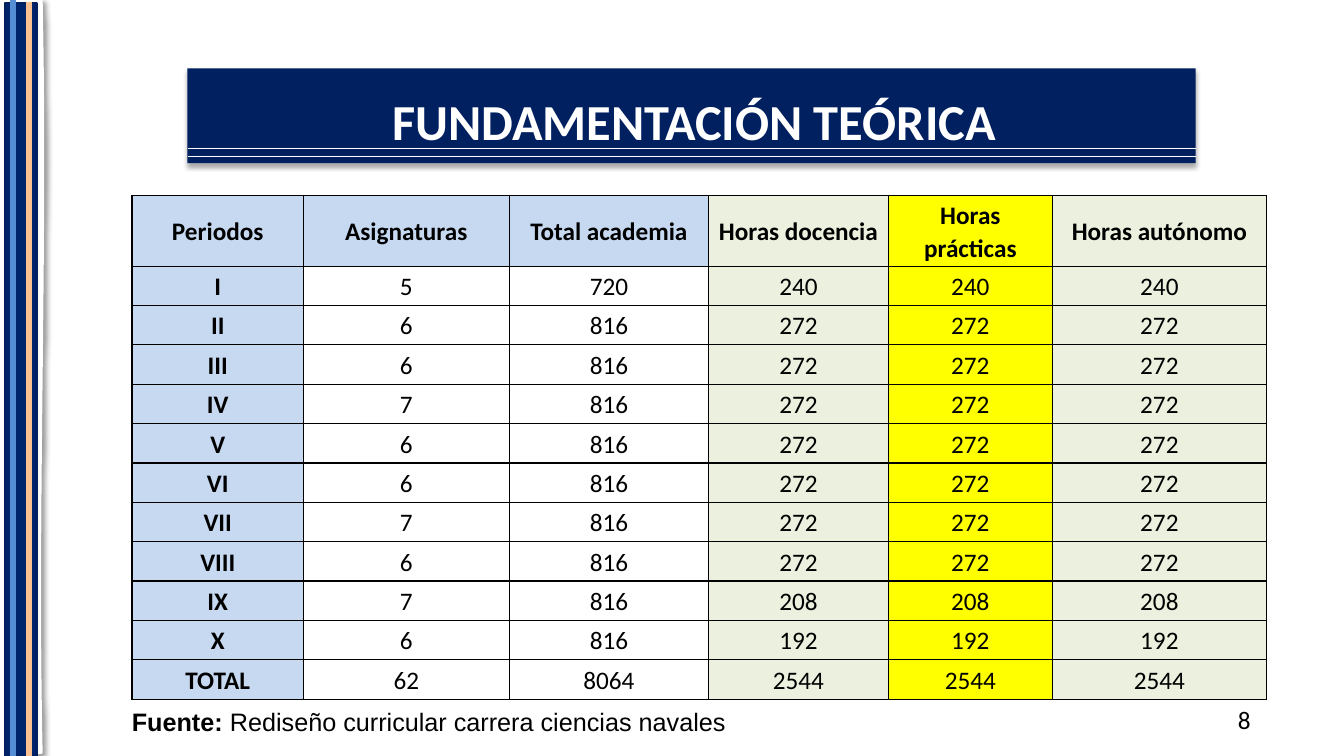
from dataclasses import dataclass

from lxml.etree import SubElement
from pptx import Presentation
from pptx.dml.color import RGBColor
from pptx.enum.shapes import MSO_CONNECTOR, MSO_SHAPE
from pptx.enum.text import MSO_ANCHOR, MSO_AUTO_SIZE, PP_ALIGN
from pptx.oxml.ns import qn
from pptx.util import Inches, Pt


@dataclass(frozen=True)
class Theme:
    navy: str = "002060"
    band: str = "00246C"
    blue: str = "558ED5"
    peach: str = "FAC090"
    pale: str = "C6D9F1"
    green: str = "EBF1DE"
    yellow: str = "FFFF00"
    white: str = "FFFFFF"
    black: str = "000000"
    head: int = 36
    body: int = 18
    font: str = "Calibri"
    note: str = "Arial"


T = Theme()

HEADS = ["Periodos", "Asignaturas", "Total academia",
         "Horas docencia", "Horas prácticas", "Horas autónomo"]
# Period, subjects, total hours, hours of each of the three kinds
HOURS = [
    ("I", 5, 720, 240), ("II", 6, 816, 272), ("III", 6, 816, 272),
    ("IV", 7, 816, 272), ("V", 6, 816, 272), ("VI", 6, 816, 272),
    ("VII", 7, 816, 272), ("VIII", 6, 816, 272), ("IX", 7, 816, 208),
    ("X", 6, 816, 192), ("TOTAL", 62, 8064, 2544),
]
WIDTHS = [1.7, 2.04, 1.98, 1.78, 1.63, 2.12]


def color(code):
    return RGBColor.from_string(code)


def style(run, size=T.body, font=T.font, ink=T.black, bold=False):
    run.font.size = Pt(size)
    run.font.name = font
    run.font.color.rgb = color(ink)
    run.font.bold = bold


def shade(shape, alpha, blur, dist, angle):
    """Give the shape an outer shadow."""
    shape.shadow.inherit = False
    effect = shape._element.spPr.find(qn("a:effectLst"))
    outer = SubElement(effect, qn("a:outerShdw"), blurRad=str(Pt(blur)),
                       dist=str(Pt(dist)), dir=str(angle * 60000),
                       rotWithShape="0")
    tint = SubElement(outer, qn("a:srgbClr"), val=T.black)
    SubElement(tint, qn("a:alpha"), val=str(alpha * 1000))


def block(slide, kind, box, fill, line=None):
    shape = slide.shapes.add_shape(kind, *map(Inches, box))
    shape.shadow.inherit = False
    shape.fill.solid()
    shape.fill.fore_color.rgb = color(fill)
    if line:
        shape.line.color.rgb = color(line)
        shape.line.width = Pt(2)
    else:
        shape.line.fill.background()
    return shape


def rule(slide, start, end, ink, width):
    line = slide.shapes.add_connector(
        MSO_CONNECTOR.STRAIGHT, *map(Inches, start + end))
    line.line.color.rgb = color(ink)
    line.line.width = Pt(width)
    SubElement(line._element.spPr, qn("a:effectLst"))


def label(slide, box, text, align, grow=True):
    """Place a text box and return its paragraph."""
    frame = slide.shapes.add_textbox(*map(Inches, box)).text_frame
    frame.word_wrap = True
    if grow:
        frame.auto_size = MSO_AUTO_SIZE.SHAPE_TO_FIT_TEXT
    para = frame.paragraphs[0]
    para.text = text
    para.alignment = align
    return para


def edge(cell):
    """Draw thin black borders; call before the fill is set."""
    props = cell._tc.get_or_add_tcPr()
    for side in ("lnL", "lnR", "lnT", "lnB"):
        line = SubElement(props, qn(f"a:{side}"), w=str(Pt(1)))
        fill = SubElement(line, qn("a:solidFill"))
        SubElement(fill, qn("a:srgbClr"), val=T.black)


def ribbon(slide, x, y, w, h):
    # The wave lies on its side along the right of the band
    length, thick = 7.47, 0.13
    wave = block(slide, MSO_SHAPE.WAVE,
                 (x + w - length / 2, y + h / 2 - 0.1, length, thick),
                 T.white, T.white)
    wave.rotation = 90
    shade(wave, 40, 4, 3, 45)
    block(slide, MSO_SHAPE.RECTANGLE, (x, y, w, h), T.band, T.navy)
    for dx, top, ink in ((0.08, 0, T.blue), (0.24, 0.02, T.peach)):
        rule(slide, (x + dx, top), (x + dx, top + 7.5), ink, 4.5)


def banner(slide, x, y, w, h):
    bar = block(slide, MSO_SHAPE.RECTANGLE, (x, y, w, h), T.navy)
    shade(bar, 32, 3.5, 2.2, 90)
    title = label(slide, (x + 1.76, y + 0.16, 6.53, 0.71),
                  "FUNDAMENTACIÓN TEÓRICA", PP_ALIGN.CENTER)
    style(title.runs[0], T.head, ink=T.white, bold=True)
    for dy in (0.87, 0.79):
        rule(slide, (x, y + dy), (x + w, y + dy), T.white, 0.75)


def grid(slide, x, y, w, h):
    rows = [HEADS] + [(name, count, total, part, part, part)
                      for name, count, total, part in HOURS]
    table = slide.shapes.add_table(
        len(rows), len(HEADS), *map(Inches, (x, y, w, h))).table
    table.first_row = table.horz_banding = False
    for col, width in zip(table.columns, WIDTHS):
        col.width = Inches(width)
    top = 0.7
    for i, row in enumerate(table.rows):
        row.height = Inches((h - top) / len(HOURS) if i else top)
    fills = [T.pale, T.white, T.white, T.green, T.yellow, T.green]
    for i, row in enumerate(rows):
        for j, value in enumerate(row):
            cell = table.cell(i, j)
            edge(cell)
            cell.fill.solid()
            cell.fill.fore_color.rgb = color(
                T.pale if i == 0 and j < 3 else fills[j])
            cell.vertical_anchor = MSO_ANCHOR.MIDDLE
            cell.margin_left = cell.margin_right = Inches(0.07)
            cell.margin_top = cell.margin_bottom = 0
            para = cell.text_frame.paragraphs[0]
            para.text = str(value)
            para.alignment = PP_ALIGN.CENTER
            para.line_spacing = 1.07
            style(para.runs[0], bold=i == 0 or j == 0)


def footer(slide, x, y, w, h):
    # Source of the figures
    source = label(slide, (x, y, 6.67, h), "Fuente:", PP_ALIGN.JUSTIFY)
    source.line_spacing = 1.07
    source.add_run().text = " Rediseño curricular carrera ciencias navales"
    for run, bold in zip(source.runs, (True, False)):
        style(run, font=T.note, bold=bold)
    # Page number
    page = label(slide, (x + w - 0.49, y, 0.49, h), "8", PP_ALIGN.LEFT, False)
    style(page.runs[0])


def main():
    deck = Presentation()
    deck.slide_width, deck.slide_height = Inches(13.33), Inches(7.5)
    slide = deck.slides.add_slide(deck.slide_layouts[6])
    ribbon(slide, 0.05, 0.03, 0.31, 7.47)
    grid(slide, 1.31, 1.94, 11.26, 5)
    banner(slide, 1.86, 0.68, 10, 0.94)
    footer(slide, 1.21, 6.94, 11.46, 0.41)
    deck.save("out.pptx")


if __name__ == "__main__":
    main()
